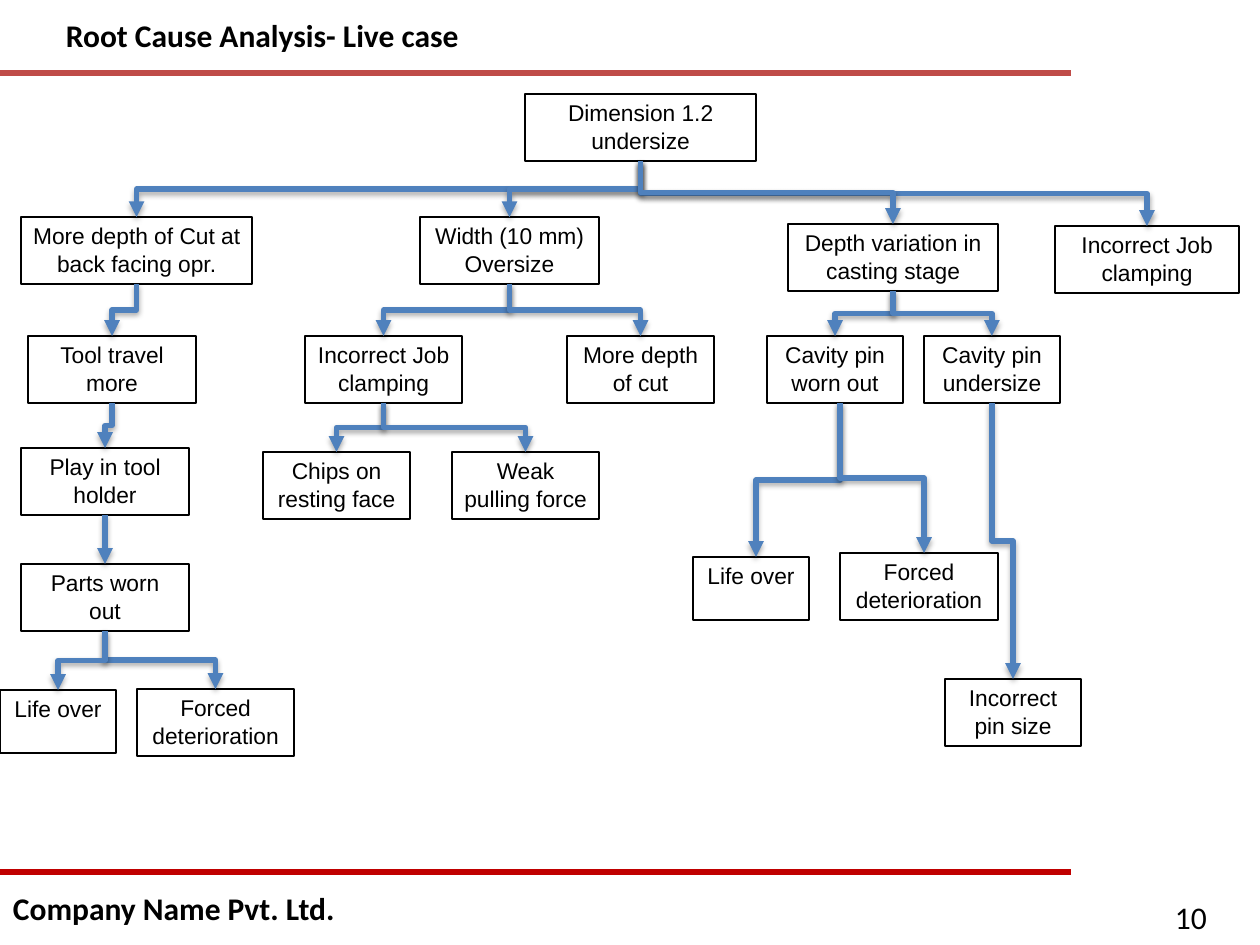
from pptx import Presentation
from pptx.dml.color import RGBColor
from pptx.enum.shapes import MSO_CONNECTOR, MSO_SHAPE
from pptx.enum.text import MSO_ANCHOR, PP_ALIGN
from pptx.oxml import parse_xml
from pptx.util import Emu, Pt

RECT = MSO_SHAPE.RECTANGLE
ELBOW, STRAIGHT = MSO_CONNECTOR.ELBOW, MSO_CONNECTOR.STRAIGHT
TOP, MIDDLE = MSO_ANCHOR.TOP, MSO_ANCHOR.MIDDLE
LEFT, CENTER = PP_ALIGN.LEFT, PP_ALIGN.CENTER
BOTTOM_SITE, TOP_SITE = 2, 0

NS = 'xmlns:a="http://schemas.openxmlformats.org/drawingml/2006/main"'
COLORS = {
    "text": "000000",
    "arrow": "4F81BD",
    "header_rule": "BF4C48",
    "footer_rule": "C00000",
    "shadow": "000000",
}

CAUSES = {
    "problem": (525, 94, 231, 67, "Dimension 1.2 undersize"),
    "back_facing": (21, 217, 231, 67, "More depth of Cut at back facing opr."),
    "width": (420, 217, 179, 67, "Width (10 mm) Oversize"),
    "casting": (788, 224, 210, 67, "Depth variation in casting stage"),
    "job_clamping": (1055, 226, 184, 67, "Incorrect Job clamping"),
    "tool_travel": (28, 336, 168, 67, "Tool travel more"),
    "tool_holder": (21, 448, 168, 67, "Play in tool holder"),
    "parts_worn": (21, 564, 168, 67, "Parts worn out"),
    "parts_life": (0, 690, 116, 63, "Life over"),
    "parts_forced": (137, 689, 157, 67, "Forced deterioration"),
    "width_clamping": (305, 336, 157, 67, "Incorrect Job clamping"),
    "cut_depth": (567, 336, 147, 67, "More depth of cut"),
    "chips": (263, 452, 147, 67, "Chips on resting face"),
    "weak_force": (452, 452, 147, 67, "Weak pulling force"),
    "pin_worn": (767, 336, 136, 67, "Cavity pin worn out"),
    "pin_undersize": (924, 336, 136, 67, "Cavity pin undersize"),
    "pin_life": (693, 557, 116, 63, "Life over"),
    "pin_forced": (840, 553, 158, 67, "Forced deterioration"),
    "pin_size": (945, 679, 136, 67, "Incorrect pin size"),
}

EFFECTS = {
    "problem": ("back_facing", "width", "job_clamping", "casting"),
    "back_facing": ("tool_travel",),
    "tool_travel": ("tool_holder",),
    "tool_holder": ("parts_worn",),
    "parts_worn": ("parts_forced", "parts_life"),
    "width": ("width_clamping", "cut_depth"),
    "width_clamping": ("chips", "weak_force"),
    "casting": ("pin_worn", "pin_undersize"),
    "pin_worn": ("pin_life", "pin_forced"),
    "pin_undersize": ("pin_size",),
}
SHIFTS = {"pin_worn": 5}


def px(n):
    return Emu(round(n * 914400 / 126))


def rgb(name):
    return RGBColor.from_string(COLORS[name])


def write(s, text, font="Calibri", size=18, bold=False, align=LEFT,
          anchor=TOP, inset=(13, 6)):
    tf = s.text_frame
    tf.word_wrap = True
    tf.vertical_anchor = anchor
    tf.margin_left = tf.margin_right = px(inset[0])
    tf.margin_top = tf.margin_bottom = px(inset[1])
    p = tf.paragraphs[0]
    p.alignment = align
    r = p.add_run()
    r.text = text
    r.font.name, r.font.size, r.font.bold = font, Pt(size), bold
    r.font.color.rgb = rgb("text")


def add_label(slide, x, y, w, h, text, **fmt):
    s = slide.shapes.add_textbox(px(x), px(y), px(w), px(h))
    write(s, text, **fmt)


def add_cause(slide, x, y, w, h, text):
    s = slide.shapes.add_shape(RECT, px(x), px(y), px(w), px(h))
    s.shadow.inherit = False
    s.fill.background()
    s.line.color.rgb = rgb("text")
    s.line.width = Pt(1)
    write(s, text, font="Arial", size=13, align=CENTER, inset=(11, 5))
    return s


def add_line(slide, kind, x1, y1, x2, y2, color):
    c = slide.shapes.add_connector(kind, x1, y1, x2, y2)
    c.line.color.rgb = rgb(color)
    c.line.width = Pt(3)
    return c


def add_rule(slide, y, color):
    c = add_line(slide, STRAIGHT, 0, px(y), px(1071), px(y), color)
    c._element.spPr.append(parse_xml(f"<a:effectLst {NS}/>"))


def add_arrow(slide, cause, effect, shift=0):
    x1 = cause.left + cause.width // 2 + px(shift)
    y1 = cause.top + cause.height
    x2 = effect.left + effect.width // 2 + px(shift)
    y2 = effect.top
    c = add_line(slide, ELBOW, x1, y1, x2, y2, "arrow")
    if not shift:
        c.begin_connect(cause, BOTTOM_SITE)
        c.end_connect(effect, TOP_SITE)
    turn_downward(c, x1, y1, x2, y2)
    c.line._get_or_add_ln().append(
        parse_xml(f'<a:tailEnd {NS} type="triangle"/>'))
    c._element.spPr.append(parse_xml(
        f'<a:effectLst {NS}><a:outerShdw blurRad="40000" dist="23000" '
        f'dir="5400000" rotWithShape="0"><a:srgbClr val="{COLORS["shadow"]}">'
        '<a:alpha val="35000"/></a:srgbClr></a:outerShdw></a:effectLst>'))


def turn_downward(c, x1, y1, x2, y2):
    rightward = x2 > x1
    c.width, c.height = Emu(y2 - y1), Emu(abs(x2 - x1))
    c.left = Emu((x1 + x2 - c.width) // 2)
    c.top = Emu((y1 + y2 - c.height) // 2)
    xfrm = c._element.spPr.xfrm
    xfrm.set("rot", str((270 if rightward else 90) * 60000))
    xfrm.set("flipH", "1" if rightward else "0")
    xfrm.set("flipV", "0")


def main():
    prs = Presentation()
    prs.slide_width, prs.slide_height = px(1260), px(945)
    slide = prs.slides.add_slide(prs.slide_layouts[6])

    add_rule(slide, 73, "header_rule")
    add_rule(slide, 872, "footer_rule")
    add_label(slide, 53, 10, 728, 50, "Root Cause Analysis- Live case", bold=True)
    add_label(slide, 0, 892, 357, 32, "Company Name Pvt. Ltd.", bold=True,
              anchor=MIDDLE)
    add_label(slide, 1162, 892, 97, 50, "10")

    boxes = {key: add_cause(slide, *cause) for key, cause in CAUSES.items()}
    for cause, effects in EFFECTS.items():
        for effect in effects:
            add_arrow(slide, boxes[cause], boxes[effect], SHIFTS.get(cause, 0))

    prs.save("out.pptx")


if __name__ == "__main__":
    main()
